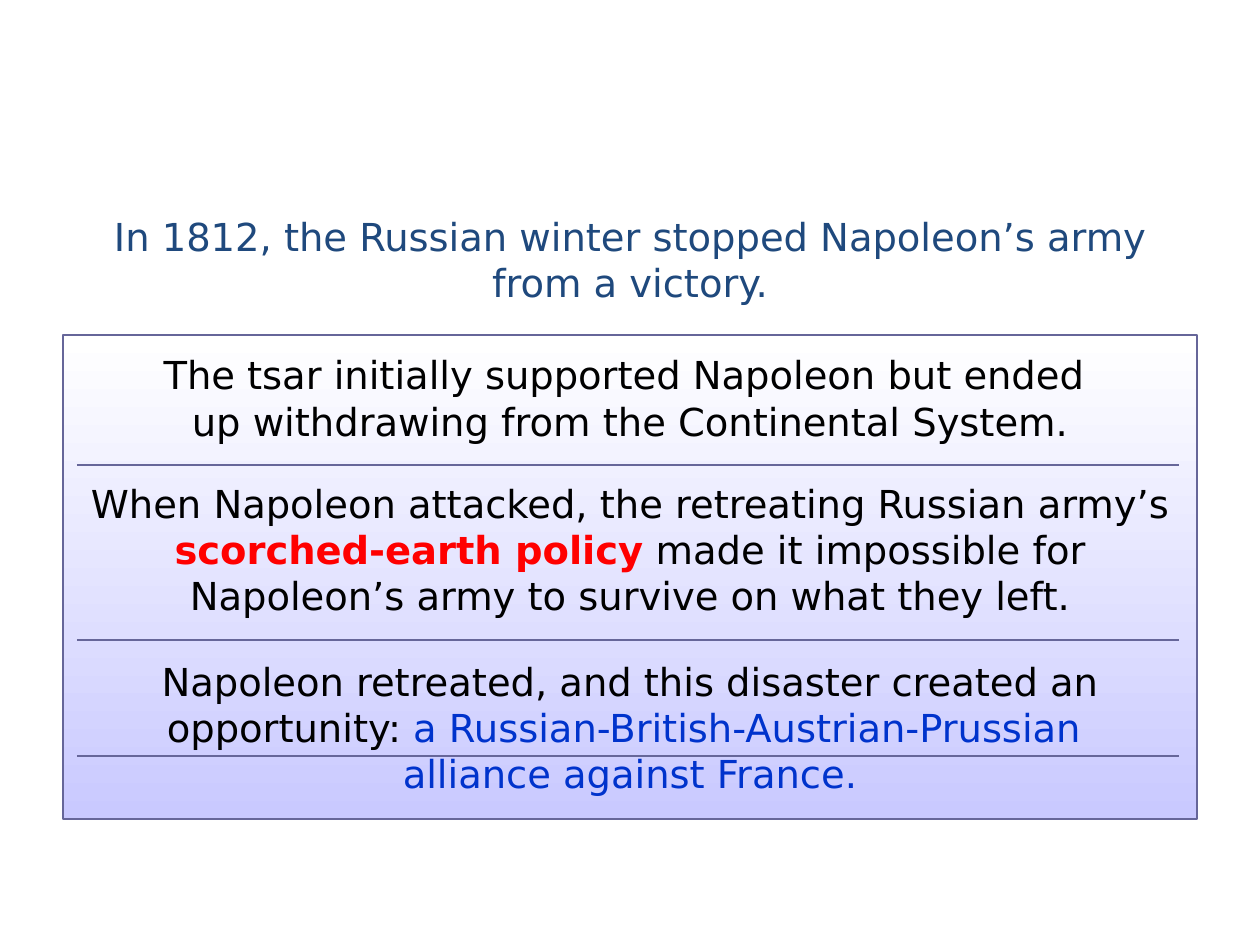
"""Builds a slide on Napoleon's failed Russian campaign of 1812."""
import lxml.etree
import pptx
import pptx.dml.color
import pptx.enum.shapes
import pptx.enum.text
import pptx.oxml.ns
import pptx.util

Inches = pptx.util.Inches
RGBColor = pptx.dml.color.RGBColor
qualified = pptx.oxml.ns.qn

FONT = "DejaVu Sans"
BLACK = RGBColor(0x00, 0x00, 0x00)
WHITE = RGBColor(0xFF, 0xFF, 0xFF)
LAVENDER = RGBColor(0xC9, 0xC9, 0xFF)
SLATE = RGBColor(0x66, 0x66, 0x99)
NAVY = RGBColor(0x1F, 0x49, 0x7D)
BLUE = RGBColor(0x00, 0x33, 0xCC)
RED = RGBColor(0xFF, 0x00, 0x00)

LEFT, WIDTH = 0.5, 9
ROW_HEIGHTS = [0.95, 1.39, 0.92, 0.58]
NO_STYLE = "{2D5ABB26-0587-4C30-8999-92F81FD0307C}"

HEADLINE = [("In 1812, the Russian winter stopped Napoleon’s army from a victory.", NAVY, False)]
STATEMENTS = [
    (2.74, 0.67, 0, [
        ("The tsar initially supported Napoleon but ended \n"
         "up withdrawing from the Continental System.", BLACK, False),
    ]),
    (3.76, 1.5, 24, [
        ("When Napoleon attacked, the retreating Russian army’s ", BLACK, False),
        ("scorched-earth policy", RED, True),
        (" made it impossible for Napoleon’s army to survive on what they left.", BLACK, False),
    ]),
    (5.17, 1.2, 0, [
        ("Napoleon retreated, and this disaster created an opportunity: ", BLACK, False),
        ("a Russian-British-Austrian-Prussian \nalliance against France.", BLUE, False),
    ]),
]


def add_run(paragraph, text, color, bold):
    run = paragraph.add_run()
    run.text = text
    run.font.name = FONT
    run.font.size = pptx.util.Pt(22)
    run.font.color.rgb = color
    run.font.bold = bold


def write_text(shape, runs, space_after):
    frame = shape.text_frame
    frame.word_wrap = True
    frame.auto_size = pptx.enum.text.MSO_AUTO_SIZE.NONE
    frame.vertical_anchor = pptx.enum.text.MSO_ANCHOR.TOP
    paragraph = frame.paragraphs[0]
    paragraph.alignment = pptx.enum.text.PP_ALIGN.CENTER
    paragraph.space_after = pptx.util.Pt(space_after)
    for text, color, bold in runs:
        for index, line in enumerate(text.split("\n")):
            if index:
                paragraph.add_line_break()
            add_run(paragraph, line, color, bold)


def place_title(slide):
    title = slide.shapes.title
    title.left, title.top = Inches(LEFT), Inches(1.64)
    title.width, title.height = Inches(WIDTH), Inches(0.67)
    write_text(title, HEADLINE, 15.9)


def add_panel(slide):
    panel = slide.shapes.add_shape(
        pptx.enum.shapes.MSO_SHAPE.RECTANGLE,
        Inches(LEFT), Inches(2.66), Inches(WIDTH), Inches(3.84))
    panel.shadow.inherit = False
    panel.fill.gradient()
    panel.fill.gradient_angle = 270
    for stop, position, color in zip(panel.fill.gradient_stops, (0, 1), (WHITE, LAVENDER)):
        stop.position = position
        stop.color.rgb = color
    panel.line.color.rgb = SLATE
    panel.line.width = pptx.util.Pt(1.5)


def add_border(cell, side):
    properties = cell._tc.get_or_add_tcPr()
    border = lxml.etree.Element(qualified("a:ln" + side), w=str(pptx.util.Pt(1)))
    fill = lxml.etree.SubElement(border, qualified("a:solidFill"))
    lxml.etree.SubElement(fill, qualified("a:srgbClr"), val=str(SLATE))
    properties.insert(0, border)


def add_divider_table(slide):
    frame = slide.shapes.add_table(
        len(ROW_HEIGHTS), 1, Inches(0.61), Inches(2.74), Inches(8.75), Inches(sum(ROW_HEIGHTS)))
    table = frame.table
    table.first_row = False
    table.horz_banding = False
    table._tbl.tblPr.find(qualified("a:tableStyleId")).text = NO_STYLE
    for row, height, sides in zip(table.rows, ROW_HEIGHTS, ("B", "BT", "T", "")):
        row.height = Inches(height)
        cell = row.cells[0]
        cell.fill.background()
        for side in sides:
            add_border(cell, side)


def add_statement(slide, top, height, space_after, runs):
    box = slide.shapes.add_textbox(Inches(LEFT), Inches(top), Inches(WIDTH), Inches(height))
    write_text(box, runs, space_after)


def main():
    presentation = pptx.Presentation()
    presentation.slide_width = Inches(10)
    presentation.slide_height = Inches(7.5)
    slide = presentation.slides.add_slide(presentation.slide_layouts.get_by_name("Title Only"))
    place_title(slide)
    add_panel(slide)
    add_divider_table(slide)
    for statement in STATEMENTS:
        add_statement(slide, *statement)
    presentation.save("out.pptx")


if __name__ == "__main__":
    main()
